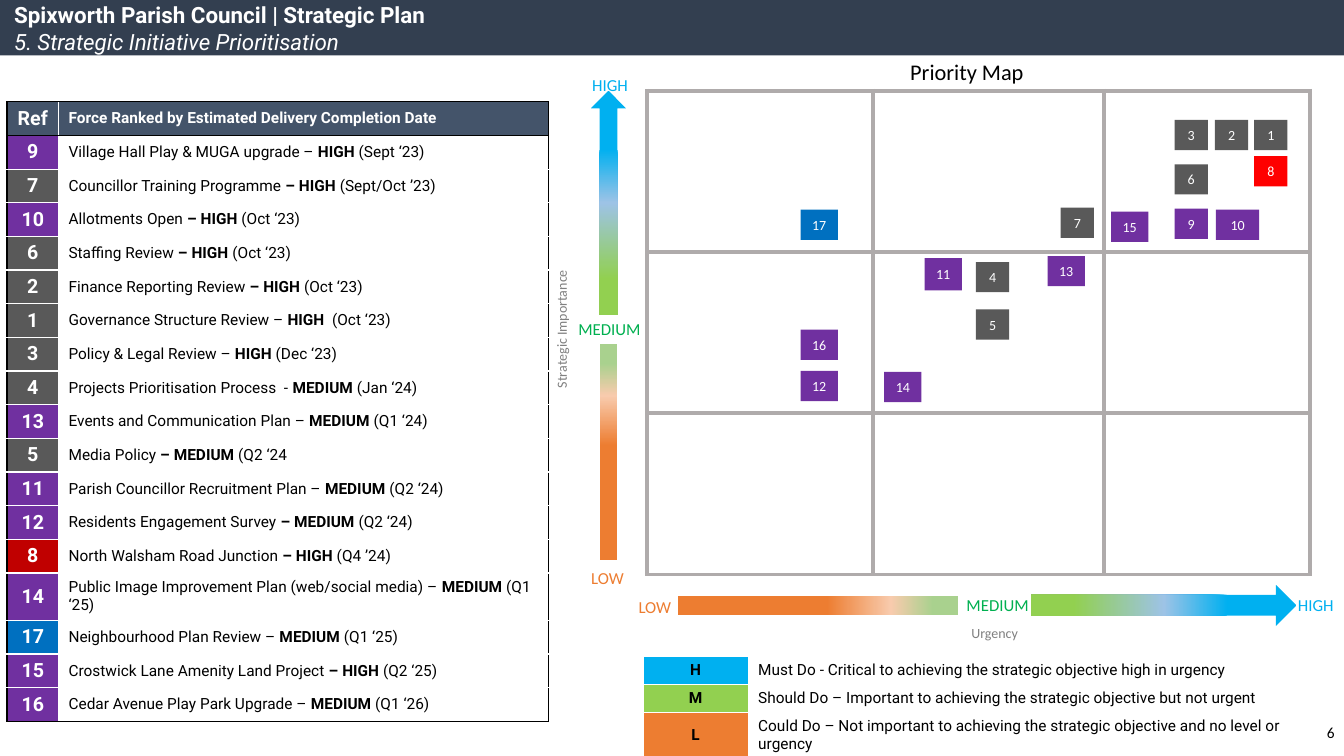
import pptx
import pptx.dml.color
import pptx.enum.shapes
import pptx.enum.text
import pptx.oxml.ns
import pptx.util
import lxml.etree

HEADING = ("Spixworth Parish Council | Strategic Plan", "5. Strategic Initiative Prioritisation")
RANK_HEADER = ("Ref", "Force Ranked by Estimated Delivery Completion Date")
INITIATIVES = [
    (9, "Village Hall Play & MUGA upgrade – ", "HIGH ", "(Sept ‘23)"),
    (7, "Councillor Training Programme ", "– HIGH ", "(Sept/Oct ’23)"),
    (10, "Allotments Open ", "– HIGH ", "(Oct ‘23)"),
    (6, "Staffing Review ", "– HIGH ", "(Oct ‘23)"),
    (2, "Finance Reporting Review ", "– HIGH ", "(Oct ‘23)"),
    (1, "Governance Structure Review – ", "HIGH ", " (Oct ‘23)"),
    (3, "Policy & Legal Review – ", "HIGH ", "(Dec ‘23)"),
    (4, "Projects Prioritisation Process  - ", "MEDIUM ", "(Jan ‘24)"),
    (13, "Events and Communication Plan – ", "MEDIUM ", "(Q1 ‘24)"),
    (5, "Media Policy ", "– MEDIUM ", "(Q2 ‘24"),
    (11, "Parish Councillor Recruitment Plan – ", "MEDIUM ", "(Q2 ‘24)"),
    (12, "Residents Engagement Survey ", "– MEDIUM ", "(Q2 ‘24)"),
    (8, "North Walsham Road Junction ", "– HIGH ", "(Q4 ’24)"),
    (14, "Public Image Improvement Plan (web/social media) – ", "MEDIUM ", "(Q1 ‘25)"),
    (17, "Neighbourhood Plan Review – ", "MEDIUM ", "(Q1 ‘25)"),
    (15, "Crostwick Lane Amenity Land Project ", "– HIGH ", "(Q2 ‘25)"),
    (16, "Cedar Avenue Play Park Upgrade – ", "MEDIUM ", "(Q1 ‘26)"),
]
LEGEND = [
    ("H", "Must Do - Critical to achieving the strategic objective high in urgency", "00B0F0"),
    ("M", "Should Do – Important to achieving the strategic objective but not urgent", "92D050"),
    ("L", "Could Do – Not important to achieving the strategic objective and no level or urgency", "ED7D31"),
]
MAP_SPOTS = {
    1: (12.44, 1.19), 2: (12.05, 1.19), 3: (11.65, 1.19), 4: (9.68, 2.6), 5: (9.68, 3.07),
    6: (11.65, 1.63), 7: (10.52, 2.06), 8: (12.44, 1.55), 9: (11.65, 2.07), 10: (12.06, 2.08),
    11: (9.17, 2.56), 12: (7.94, 3.68), 13: (10.39, 2.54), 14: (8.77, 3.69), 15: (11.02, 2.1),
    16: (7.94, 3.27), 17: (7.94, 2.08),
}
LOW_TO_MEDIUM = [(53, "ED7D31"), (76, "F8CBAD"), (91, "A9D18E")]
HIGH_TO_MEDIUM = [(26, "00B0F0"), (50, "9DC3E6"), (84, "92D050")]
AXIS_BARS = [
    ("RECTANGLE", (5.95, 3.41, 0.17, 2.15), 0, LOW_TO_MEDIUM),
    ("DOWN_ARROW", (5.86, 0.9, 0.35, 2.22), 180, HIGH_TO_MEDIUM),
    ("RECTANGLE", (8.02, 4.62, 0.19, 2.78), 90, LOW_TO_MEDIUM),
    ("DOWN_ARROW", (11.34, 4.69, 0.41, 2.63), 270, HIGH_TO_MEDIUM),
]
LABELS = [
    ("HIGH", (5.77, 0.69, 0.56, 0.3), 0, 12, "00B0F0"),
    ("MEDIUM", (5.63, 3.11, 0.83, 0.3), 0, 12, "00B050"),
    ("LOW", (5.76, 5.58, 0.53, 0.3), 0, 12, "ED7D31"),
    ("LOW", (6.23, 5.87, 0.53, 0.3), 0, 12, "ED7D31"),
    ("MEDIUM", (9.48, 5.85, 0.83, 0.3), 0, 12, "00B050"),
    ("HIGH", (12.77, 5.85, 0.56, 0.3), 0, 12, "00B0F0"),
    ("Strategic Importance", (4.87, 3.13, 1.4, 0.27), 270, 10, "808080"),
    ("Urgency", (9.53, 6.15, 0.67, 0.27), 0, 10, "808080"),
    ("6", (13.06, 7.12, 0.28, 0.29), 0, 11, "000000"),
    ("Priority Map", (8.92, 0.53, 1.34, 0.37), 0, 16, "000000"),
]
BLACK, WHITE, MAP_LINE = "000000", "FFFFFF", "AFABAB"
CENTER, LEFT = pptx.enum.text.PP_ALIGN.CENTER, pptx.enum.text.PP_ALIGN.LEFT
MIDDLE, TOP = pptx.enum.text.MSO_ANCHOR.MIDDLE, pptx.enum.text.MSO_ANCHOR.TOP
qn = pptx.oxml.ns.qn


def rgb(code):
    """Turn a hex string into a colour."""
    return pptx.dml.color.RGBColor.from_string(code)


def inches(lengths):
    """Convert a series of lengths to inches."""
    return [pptx.util.Inches(length) for length in lengths]


def style(run, font, size, colour, bold=False, italic=False):
    """Format one run."""
    run.font.name, run.font.size = font, pptx.util.Pt(size)
    run.font.color.rgb = rgb(colour)
    run.font.bold, run.font.italic = bold, italic


def add_block(slide, kind, box, rotation=0, fill=None):
    """Add a preset shape without outline or shadow."""
    block = slide.shapes.add_shape(pptx.enum.shapes.MSO_SHAPE[kind], *inches(box))
    block.shadow.inherit = False
    block.line.fill.background()
    block.rotation = rotation
    if fill:
        block.fill.solid()
        block.fill.fore_color.rgb = rgb(fill)
    return block


def add_axis_bar(slide, kind, box, rotation, stops):
    """Add an axis bar with a three-stop gradient."""
    bar = add_block(slide, kind, box, rotation)
    bar.fill.gradient()
    bar.fill.gradient_angle = 90
    stop_list = bar._element.spPr.find(".//" + qn("a:gsLst"))
    stop_list.clear()
    for share, colour in stops:
        stop = lxml.etree.SubElement(stop_list, qn("a:gs"), pos=str(share * 1000))
        lxml.etree.SubElement(stop, qn("a:srgbClr"), val=colour)


def add_label(slide, words, box, rotation, size, colour):
    """Add a one-line label."""
    label = slide.shapes.add_textbox(*inches(box))
    label.rotation = rotation
    label.text_frame.word_wrap = False
    label.text_frame.text = words
    line = label.text_frame.paragraphs[0]
    line.alignment = CENTER
    style(line.runs[0], "Calibri", size, colour)


def add_grid(slide, left, top, widths, heights):
    """Add a plain table with the given columns and rows."""
    box = inches((left, top, sum(widths), sum(heights)))
    grid = slide.shapes.add_table(len(heights), len(widths), *box).table
    grid.first_row = grid.horz_banding = False
    for column, width in zip(grid.columns, inches(widths)):
        column.width = width
    for row, height in zip(grid.rows, inches(heights)):
        row.height = height
    return grid


def fill_cell(cell, borders, width=1, fill=None, runs=(), size=11, colour=BLACK, align=LEFT, anchor=MIDDLE):
    """Set borders (left, right, top, bottom), fill and (words, bold) runs of a cell."""
    properties = cell._tc.get_or_add_tcPr()
    for side, border in zip("LRTB", borders):
        line = lxml.etree.SubElement(properties, qn("a:ln" + side), w=str(width * 12700))
        paint = lxml.etree.SubElement(line, qn("a:solidFill" if border else "a:noFill"))
        if border:
            lxml.etree.SubElement(paint, qn("a:srgbClr"), val=border)
    if fill:
        cell.fill.solid()
        cell.fill.fore_color.rgb = rgb(fill)
    else:
        cell.fill.background()
    cell.vertical_anchor = anchor
    paragraph = cell.text_frame.paragraphs[0]
    paragraph.alignment = align
    for words, bold in runs:
        run = paragraph.add_run()
        run.text = words
        style(run, "Roboto", size, colour, bold)
    if not runs:
        cell.margin_top = cell.margin_bottom = 0
        lxml.etree.SubElement(paragraph._p, qn("a:endParaRPr"), sz="100")


def category_colour(ref):
    """Give the colour of an initiative's category."""
    return "595959" if ref < 8 else {8: "C00000", 17: "0070C0"}.get(ref, "7030A0")


def add_heading(slide, width):
    """Add the dark band and the two-line title."""
    band = add_block(slide, "RECTANGLE", (0, 0, width, 0.55), fill="333F50")
    slide.shapes._spTree.insert(2, band._element)
    title = slide.shapes.title
    title.left, title.top, title.width, title.height = inches((0.04, -0.04, width, 0.64))
    frame = title.text_frame
    frame.text = "\n".join(HEADING)
    frame.auto_size = pptx.enum.text.MSO_AUTO_SIZE.NONE
    frame.vertical_anchor = TOP
    for number, line in enumerate(frame.paragraphs):
        line.alignment = LEFT
        style(line.runs[0], "Roboto", 16, WHITE, number == 0, number == 1)


def add_ranking(slide):
    """Add the ranked list of initiatives under a spacer row."""
    heights = [0.11, 0.33] + [0.47 if ref == 14 else 0.33 + 0.004 for ref, *_ in INITIATIVES]
    ranking = add_grid(slide, 0.07, 0.9, (0.51, 4.86), heights)
    for column in range(2):
        fill_cell(ranking.cell(0, column), (WHITE, WHITE, WHITE, BLACK), fill=WHITE)
    rows = [(RANK_HEADER[0], [(RANK_HEADER[1], True)], "44546A", "44546A", WHITE)]
    for ref, name, level, date in INITIATIVES:
        rows.append((str(ref), [(name, False), (level, True), (date, False)], category_colour(ref), WHITE, BLACK))
    for number, (ref, runs, ref_fill, fill, colour) in enumerate(rows, 1):
        above = BLACK if number < 3 else WHITE
        below = BLACK if number in (1, len(rows)) else WHITE
        fill_cell(ranking.cell(number, 0), (BLACK, WHITE, above, below), 1, ref_fill, [(ref, True)], 14, WHITE, CENTER)
        fill_cell(ranking.cell(number, 1), (WHITE, BLACK, above, below), 1, fill, runs, 11, colour)


def add_legend(slide):
    """Add the key to the priority levels."""
    legend = add_grid(slide, 6.38, 6.37, (1.04, 5.64), (0.14, 0.28, 0.28, 0.45))
    frame = (WHITE,) * 4
    for column in range(2):
        fill_cell(legend.cell(0, column), frame, fill=WHITE)
    for number, (level, meaning, colour) in enumerate(LEGEND, 1):
        fill_cell(legend.cell(number, 0), frame, 1, colour, [(level, True)], align=CENTER)
        fill_cell(legend.cell(number, 1), frame, 1, WHITE, [(meaning, False)], anchor=TOP)


def add_priority_map(slide):
    """Add the three-by-three map with a spare column and row."""
    grid = add_grid(slide, 5.32, 0.9, (1.1, 2.24, 2.29, 2.04), (1.6, 1.6, 1.6, 0.4))
    for row in range(4):
        for column in range(4):
            in_rows, in_columns = row < 3, column > 0
            edges = (in_rows and in_columns, in_rows, in_columns, in_rows and in_columns)
            fill_cell(grid.cell(row, column), [MAP_LINE if edge else None for edge in edges], 3)


def add_chip(slide, ref, left, top):
    """Place an initiative's number on the map."""
    width = 0.33 if ref < 10 else 0.43 if ref == 10 else 0.37
    colour = "FF0000" if ref == 8 else category_colour(ref)
    chip = add_block(slide, "RECTANGLE", (left, top, width, 0.32 if ref == 11 else 0.3), fill=colour)
    chip.text_frame.text = str(ref)
    chip.text_frame.word_wrap = False
    chip.text_frame.vertical_anchor = MIDDLE
    chip.text_frame.paragraphs[0].alignment = CENTER
    style(chip.text_frame.paragraphs[0].runs[0], "Calibri", 10, WHITE)


def main():
    """Build and save the slide."""
    deck = pptx.Presentation()
    deck.slide_width, deck.slide_height = inches((13.33, 7.5))
    slide = deck.slides.add_slide(deck.slide_layouts[5])
    add_heading(slide, 13.33)
    add_legend(slide)
    add_priority_map(slide)
    for bar in AXIS_BARS:
        add_axis_bar(slide, *bar)
    for label in LABELS:
        add_label(slide, *label)
    for ref, spot in MAP_SPOTS.items():
        add_chip(slide, ref, *spot)
    add_ranking(slide)
    deck.save("out.pptx")


if __name__ == "__main__":
    main()
